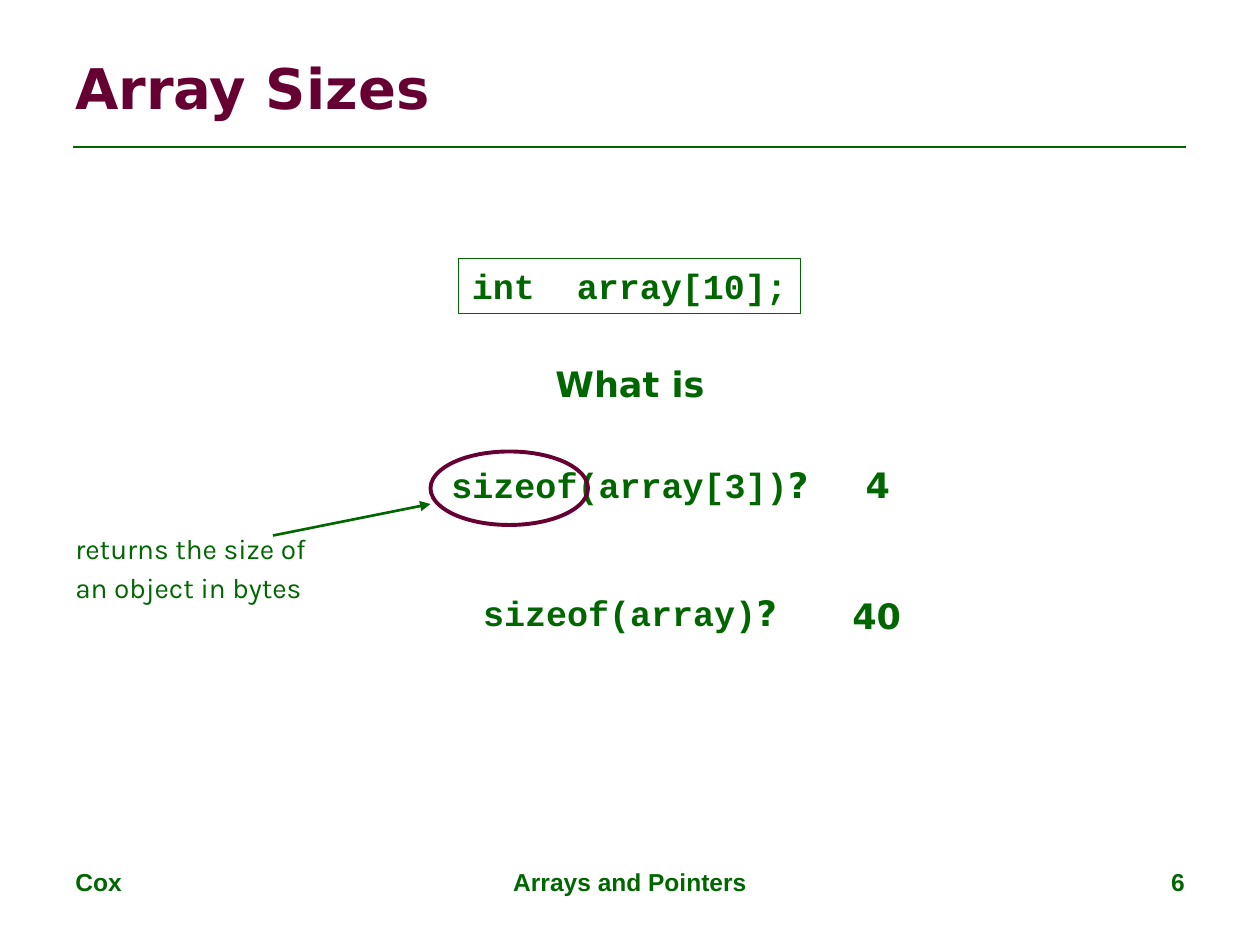
from dataclasses import dataclass

from lxml import etree
from pptx import Presentation
from pptx import util as u
from pptx.dml.color import RGBColor
from pptx.enum import shapes, text
from pptx.oxml.ns import qn

COLORS = {"green": "006600", "maroon": "660033", "white": "FFFFFF"}
LEFT, CENTER, RIGHT = text.PP_ALIGN.LEFT, text.PP_ALIGN.CENTER, text.PP_ALIGN.RIGHT
SANS, CODE, FOOTER, NOTE = "DejaVu Sans", "Courier New", "Arial", "Karla"


@dataclass(frozen=True)
class Span:
    words: str
    font: str = SANS
    size: float = 20
    color: str = "green"
    bold: bool = True


@dataclass(frozen=True)
class Line:
    spans: tuple[Span, ...]
    before: float = 0


@dataclass(frozen=True)
class Label:
    left: float
    top: float
    width: float
    height: float
    lines: tuple[Line, ...]
    align: text.PP_ALIGN = LEFT
    anchor: text.MSO_ANCHOR = text.MSO_ANCHOR.TOP
    wrap: bool = True
    inset_top: float = 3.6
    framed: bool = False


def single(words: str, font: str = SANS, size: float = 20, color: str = "green") -> tuple[Line, ...]:
    return (Line((Span(words, font, size, color),)),)


def question(call: str, before: float) -> Line:
    return Line((Span(call, CODE), Span("?")), before)


def note_line(words: str) -> Line:
    return Line((Span(words, NOTE, 16, bold=False),), 3.2)


LABELS = (
    Label(36, 491.75, 168, 37.5, single("Cox", FOOTER, 14)),
    Label(246, 491.75, 228, 37.5, single("Arrays and Pointers", FOOTER, 14), CENTER),
    Label(516, 491.75, 168, 37.5, single("6", FOOTER, 14), RIGHT),
    Label(36, 21.6, 648, 56, single("Array Sizes", SANS, 32, "maroon"),
          anchor=text.MSO_ANCHOR.MIDDLE),
    Label(36, 102, 648, 380,
          single("What is") + (question("sizeof(array[3])", 34), question("sizeof(array)", 49)),
          CENTER, inset_top=105),
    Label(262, 147.6, 195.5, 31.75, single("int  array[10];", CODE), CENTER,
          wrap=False, framed=True),
    Label(487.5, 261.5, 28.5, 31, single("4"), wrap=False),
    Label(480, 336.25, 43, 31, single("40"), wrap=False),
    Label(36, 300, 147.75, 49.75,
          (note_line("returns the size of"), note_line("an object in bytes")), wrap=False),
)


def rgb(name: str) -> RGBColor:
    return RGBColor.from_string(COLORS[name])


def add_outline(page, kind, left: float, top: float, width: float, height: float,
                color: str, weight: float):
    shape = page.shapes.add_shape(kind, u.Pt(left), u.Pt(top), u.Pt(width), u.Pt(height))
    shape.shadow.inherit = False
    shape.fill.background()
    shape.line.color.rgb = rgb(color)
    shape.line.width = u.Pt(weight)
    return shape


def add_label(page, label: Label) -> None:
    place = (label.left, label.top, label.width, label.height)
    if label.framed:
        box = add_outline(page, shapes.MSO_SHAPE.RECTANGLE, *place, "green", 0.75)
    else:
        box = page.shapes.add_textbox(*map(u.Pt, place))
    frame = box.text_frame
    frame.word_wrap = label.wrap
    frame.vertical_anchor = label.anchor
    frame.margin_top = u.Pt(label.inset_top)
    for index, line in enumerate(label.lines):
        para = frame.add_paragraph() if index else frame.paragraphs[0]
        para.alignment = label.align
        para.space_before = u.Pt(line.before)
        for span in line.spans:
            run = para.add_run()
            run.text = span.words
            run.font.name = span.font
            run.font.size = u.Pt(span.size)
            run.font.bold = span.bold
            run.font.color.rgb = rgb(span.color)


def add_line(page, start: tuple[float, float], end: tuple[float, float],
             arrow: bool = False) -> None:
    line = page.shapes.add_connector(shapes.MSO_CONNECTOR.STRAIGHT, *map(u.Pt, start + end))
    line.line.color.rgb = rgb("green")
    line.line.width = u.Pt(1.5)
    if arrow:
        etree.SubElement(line.line._get_or_add_ln(), qn("a:tailEnd"), type="triangle")
    etree.SubElement(line._element.spPr, qn("a:effectLst"))


def main() -> None:
    deck = Presentation()
    deck.slide_width, deck.slide_height = u.Pt(720), u.Pt(540)
    page = deck.slides.add_slide(deck.slide_layouts[6])
    page.background.fill.solid()
    page.background.fill.fore_color.rgb = rgb("white")
    add_line(page, (42, 84), (678, 84))
    for label in LABELS:
        add_label(page, label)
    add_line(page, (156, 306), (246, 288), arrow=True)
    add_outline(page, shapes.MSO_SHAPE.OVAL, 246, 258, 90, 42, "maroon", 2.25)
    deck.save("out.pptx")


if __name__ == "__main__":
    main()
